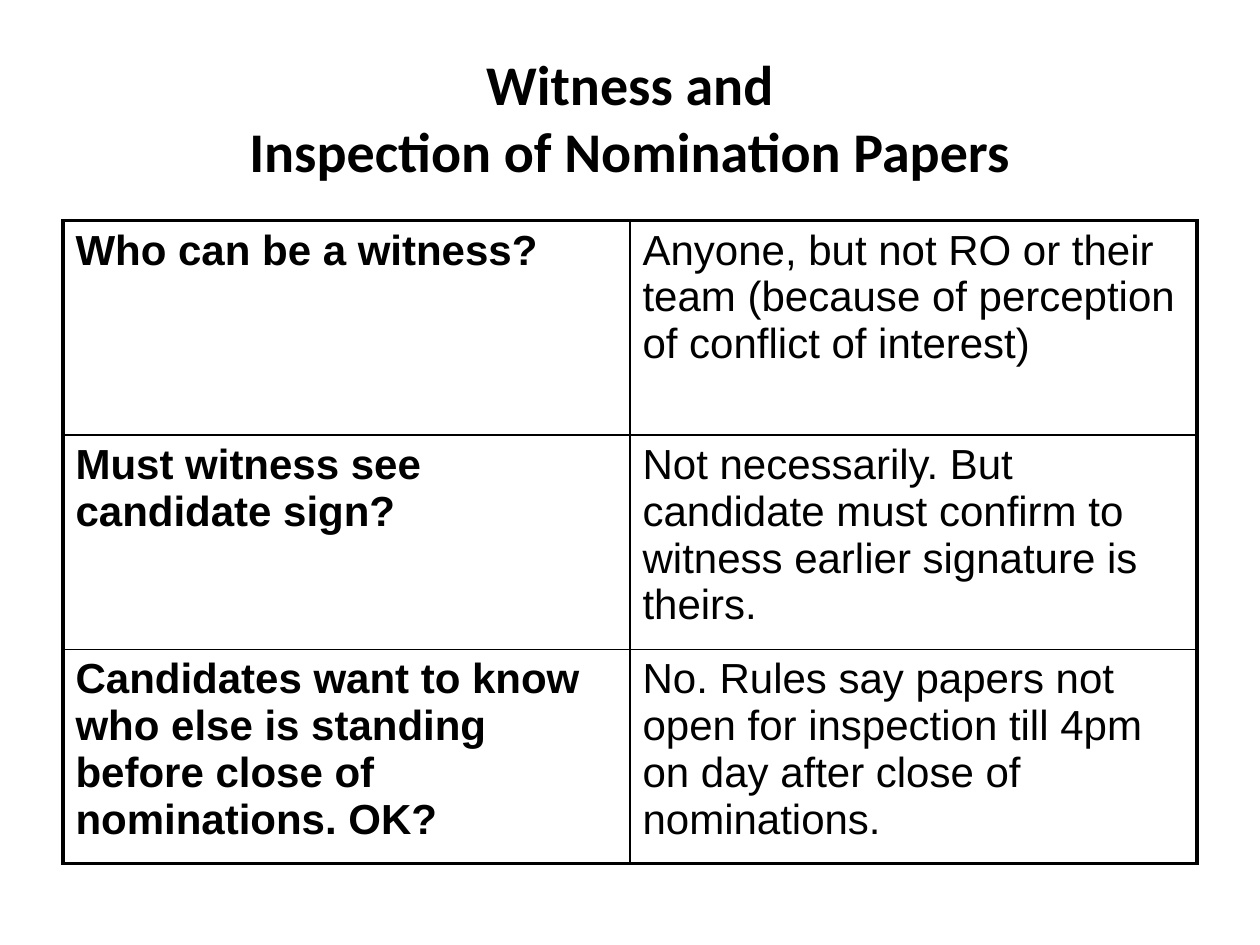
from dataclasses import dataclass

from lxml import etree
from pptx import Presentation
from pptx import util as u
from pptx.dml.color import RGBColor
from pptx.enum import text
from pptx.oxml import ns


@dataclass(frozen=True)
class Theme:
    ink: str = "000000"
    paper: str = "FFFFFF"
    title_font: str = "Calibri"
    body_font: str = "Arial"
    title_size: float = 32
    body_size: float = 24
    outer_line: float = 2.25
    inner_line: float = 1


@dataclass(frozen=True)
class Question:
    asked: str
    answer: str
    height: float


THEME = Theme()
LEFT, WIDTH = 1.27, 22.86
TITLE_LINES = ("Witness and", "Inspection of Nomination Papers")
QUESTIONS = (
    Question(
        "Who can be a witness?",
        "Anyone, but not RO or their team (because of perception of conflict of interest)",
        4.32,
    ),
    Question(
        "Must witness see candidate sign?",
        "Not necessarily. But candidate must confirm to witness earlier signature is theirs.",
        4.32,
    ),
    Question(
        "Candidates want to know who else is standing before close of nominations. OK?",
        "No. Rules say papers not open for inspection till 4pm on day after close of nominations.",
        3.15,
    ),
)


def add_span(para, words: str, font: str, size: float, bold: bool) -> None:
    span = para.add_run()
    span.text = words
    span.font.name = font
    span.font.size = u.Pt(size)
    span.font.bold = bold
    span.font.color.rgb = RGBColor.from_string(THEME.ink)


def draw_title(slide) -> None:
    box = slide.shapes.add_textbox(u.Cm(LEFT), u.Cm(0.76), u.Cm(WIDTH), u.Cm(3.18))
    frame = box.text_frame
    frame.word_wrap = True
    frame.vertical_anchor = text.MSO_ANCHOR.MIDDLE
    para = frame.paragraphs[0]
    para.alignment = text.PP_ALIGN.CENTER
    for index, line in enumerate(TITLE_LINES):
        if index:
            para.add_line_break()
        add_span(para, line, THEME.title_font, THEME.title_size, True)


def draw_borders(cell, outer_sides: dict[str, bool]) -> None:
    properties = cell._tc.get_or_add_tcPr()
    for index, (side, is_outer) in enumerate(outer_sides.items()):
        width = THEME.outer_line if is_outer else THEME.inner_line
        line = etree.Element(ns.qn(f"a:ln{side}"), w=str(int(u.Pt(width))))
        fill = etree.SubElement(line, ns.qn("a:solidFill"))
        etree.SubElement(fill, ns.qn("a:srgbClr"), val=THEME.ink)
        properties.insert(index, line)


def draw_questions(slide) -> None:
    rows, columns = len(QUESTIONS), 2
    height = sum(question.height for question in QUESTIONS)
    frame = slide.shapes.add_table(
        rows, columns, u.Cm(LEFT), u.Cm(4.45), u.Cm(WIDTH), u.Cm(height)
    )
    table = frame.table
    table.first_row = False
    table.horz_banding = False
    for row, question in enumerate(QUESTIONS):
        table.rows[row].height = u.Cm(question.height)
        for column, words in enumerate((question.asked, question.answer)):
            cell = table.cell(row, column)
            cell.fill.solid()
            cell.fill.fore_color.rgb = RGBColor.from_string(THEME.paper)
            para = cell.text_frame.paragraphs[0]
            add_span(para, words, THEME.body_font, THEME.body_size, column == 0)
            draw_borders(
                cell,
                {
                    "L": column == 0,
                    "R": column == columns - 1,
                    "T": row == 0,
                    "B": row == rows - 1,
                },
            )


def main() -> None:
    deck = Presentation()
    deck.slide_width = u.Cm(25.4)
    deck.slide_height = u.Cm(19.05)
    slide = deck.slides.add_slide(deck.slide_layouts[6])
    draw_title(slide)
    draw_questions(slide)
    deck.save("out.pptx")


if __name__ == "__main__":
    main()
